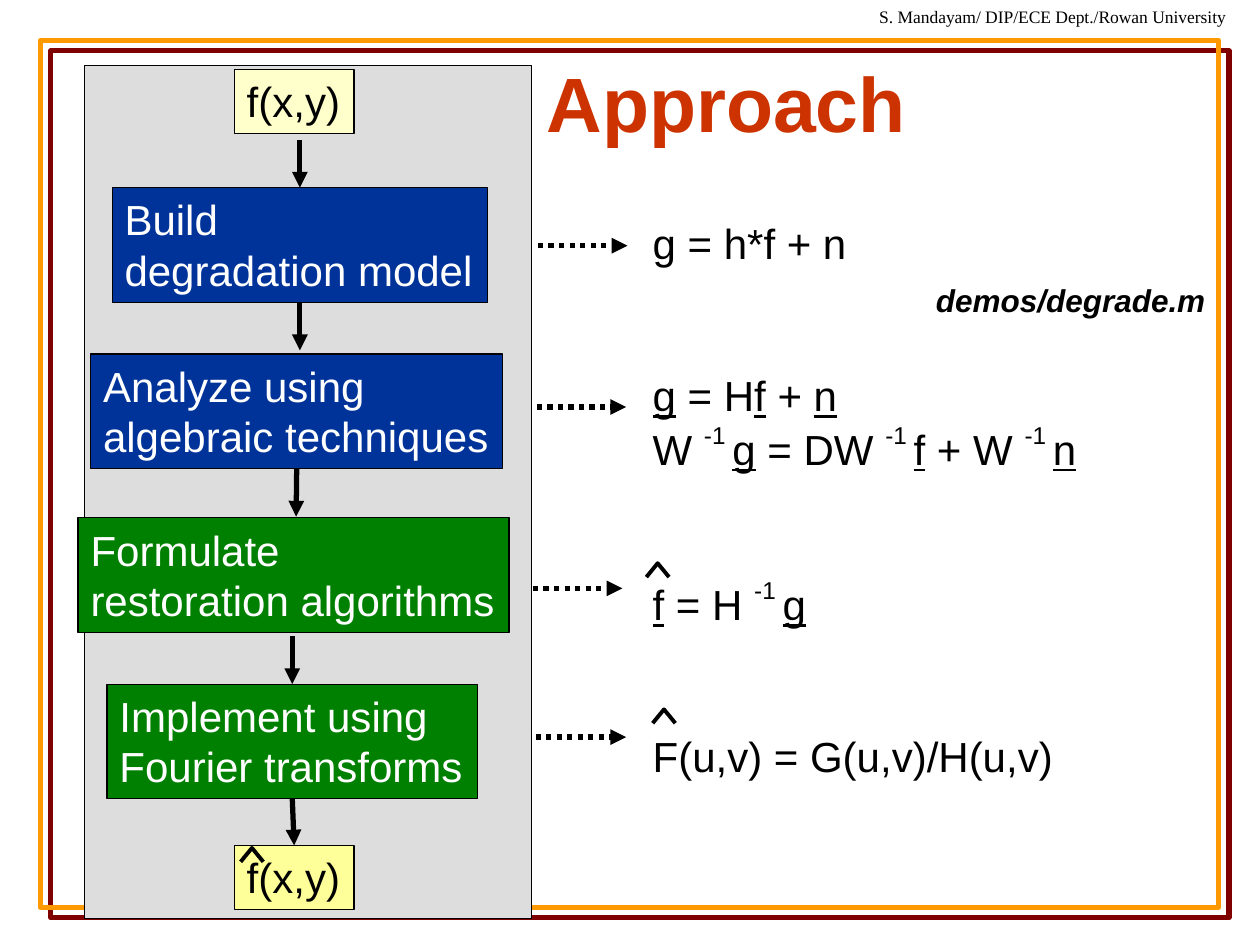
"""Build the image restoration approach slide."""
from typing import NamedTuple, Optional

from lxml.etree import SubElement
from pptx import Presentation
from pptx.dml.color import RGBColor
from pptx.enum.dml import MSO_LINE
from pptx.enum.shapes import MSO_CONNECTOR, MSO_SHAPE
from pptx.enum.text import MSO_ANCHOR, MSO_AUTO_SIZE, PP_ALIGN
from pptx.oxml.ns import qn
from pptx.util import Emu, Pt

EMU_PER_PX = 9144
TOP, BOTTOM = 0, 2
COLORS = {
    "black": "000000", "white": "FFFFFF", "title": "CC3300", "frame": "FF9900",
    "frame_shadow": "800000", "panel": "DDDDDD", "input": "FFFFCC",
    "output": "FFFF99", "model": "003399", "restore": "008000",
}


class Step(NamedTuple):
    left: int
    top: int
    width: int
    height: int
    fill: str
    ink: str
    lines: tuple


class Arrow(NamedTuple):
    start: tuple
    end: tuple
    source: Optional[str] = None
    target: Optional[str] = None
    dotted: bool = False


class Piece(NamedTuple):
    text: str
    underline: bool = False
    raised: bool = False


class Equation(NamedTuple):
    space_before: int
    pieces: tuple


STEPS = {
    "input": Step(186, 55, 95, 51, "input", "black", ("f(x,y)",)),
    "build": Step(89, 149, 298, 91, "model", "white", ("Build", "degradation model")),
    "analyze": Step(72, 281, 327, 91, "model", "white",
                    ("Analyze using", "algebraic techniques")),
    "formulate": Step(62, 411, 342, 91, "restore", "white",
                      ("Formulate", "restoration algorithms")),
    "implement": Step(85, 543, 294, 91, "restore", "white",
                      ("Implement using", "Fourier transforms")),
    "output": Step(186, 671, 95, 51, "output", "black", ("f(x,y)",)),
}
ARROWS = (
    Arrow((238, 111), (238, 149), target="build"),
    Arrow((238, 240), (238, 278), source="build"),
    Arrow((235, 372), (235, 410), source="analyze"),
    Arrow((232, 505), (232, 543), target="implement"),
    Arrow((232, 634), (233, 671), source="implement", target="output"),
    Arrow((427, 195), (498, 195), dotted=True),
    Arrow((426, 323), (497, 323), dotted=True),
    Arrow((423, 467), (494, 467), dotted=True),
    Arrow((425, 585), (497, 585), dotted=True),
)
HATS = ((191, 673), (513, 447), (518, 563))

F, G, N = (Piece(letter, underline=True) for letter in "fgn")
INVERSE = Piece("-1 ", raised=True)
EQUATIONS = (
    Equation(0, (Piece("g = h*f + n"),)),
    Equation(58, (G, Piece(" = H"), F, Piece(" + "), N)),
    Equation(0, (Piece("W "), INVERSE, G, Piece(" = DW "), INVERSE, F,
                 Piece(" + W "), INVERSE, N)),
    Equation(58, (F, Piece(" = H "), INVERSE, G)),
    Equation(58, (Piece("F(u,v) = G(u,v)/H(u,v)"),)),
)


def px(length: int) -> Emu:
    return Emu(length * EMU_PER_PX)


def color(name: str) -> RGBColor:
    return RGBColor.from_string(COLORS[name])


def place(shape, left: int, top: int, width: int, height: int) -> None:
    shape.left, shape.top, shape.width, shape.height = map(px, (left, top, width, height))


def add_run(paragraph, text: str, size: int, ink: str = "black", font: str = "Arial"):
    run = paragraph.add_run()
    run.text = text
    run.font.size, run.font.name = Pt(size), font
    run.font.color.rgb = color(ink)
    return run


def fit_to_text(frame) -> None:
    frame.word_wrap = False
    frame.auto_size = MSO_AUTO_SIZE.SHAPE_TO_FIT_TEXT
    frame.vertical_anchor = MSO_ANCHOR.TOP


def add_box(slide, box: tuple, fill: Optional[str], line: str = "black", weight: float = 0.75):
    shape = slide.shapes.add_shape(MSO_SHAPE.RECTANGLE, *map(px, box))
    shape.shadow.inherit = False
    if fill:
        shape.fill.solid()
        shape.fill.fore_color.rgb = color(fill)
    else:
        shape.fill.background()
    shape.line.color.rgb = color(line)
    shape.line.width = Pt(weight)
    return shape


def add_frame(slide) -> None:
    frame = add_box(slide, (32, 32, 935, 688), None, "frame", 3)
    effects = frame._element.spPr.find(qn("a:effectLst"))
    shadow = SubElement(effects, qn("a:outerShdw"), dist=str(Pt(8.5)), dir="2700000",
                        algn="ctr", rotWithShape="0")
    SubElement(shadow, qn("a:srgbClr"), val=COLORS["frame_shadow"])


def add_step(slide, step: Step):
    shape = add_box(slide, step[:4], step.fill)
    frame = shape.text_frame
    fit_to_text(frame)
    for index, line in enumerate(step.lines):
        paragraph = frame.add_paragraph() if index else frame.paragraphs[0]
        paragraph.alignment = PP_ALIGN.LEFT
        add_run(paragraph, line, 24, step.ink)
    return shape


def add_arrow(slide, arrow: Arrow, boxes: dict) -> None:
    connector = slide.shapes.add_connector(
        MSO_CONNECTOR.STRAIGHT, *map(px, arrow.start + arrow.end))
    if arrow.source:
        connector.begin_connect(boxes[arrow.source], BOTTOM)
    if arrow.target:
        connector.end_connect(boxes[arrow.target], TOP)
    connector.line.color.rgb = color("black")
    connector.line.width = Pt(3)
    if arrow.dotted:
        connector.line.dash_style = MSO_LINE.ROUND_DOT
    properties = connector._element.spPr
    SubElement(properties.find(qn("a:ln")), qn("a:tailEnd"), type="triangle")
    SubElement(properties, qn("a:effectLst"))


def add_hat(slide, left: int, top: int) -> None:
    builder = slide.shapes.build_freeform(left, top + 11, scale=EMU_PER_PX)
    builder.add_line_segments(((left + 9, top), (left + 18, top + 11)), close=False)
    hat = builder.convert_to_shape()
    hat.shadow.inherit = False
    hat.fill.background()
    hat.line.color.rgb = color("black")
    hat.line.width = Pt(2.25)


def add_label(slide, box: tuple, text: str, size: int, font: str = "Arial"):
    label = slide.shapes.add_textbox(*map(px, box))
    fit_to_text(label.text_frame)
    return add_run(label.text_frame.paragraphs[0], text, size, font=font)


def fill_title(title) -> None:
    place(title, 212, 53, 729, 55)
    frame = title.text_frame
    frame.auto_size = MSO_AUTO_SIZE.NONE
    frame.vertical_anchor = MSO_ANCHOR.MIDDLE
    frame.paragraphs[0].alignment = PP_ALIGN.CENTER
    add_run(frame.paragraphs[0], "Approach", 44, "title").font.bold = True


def fill_equations(body) -> None:
    place(body, 508, 168, 366, 529)
    frame = body.text_frame
    fit_to_text(frame)
    for index, equation in enumerate(EQUATIONS):
        paragraph = frame.add_paragraph() if index else frame.paragraphs[0]
        paragraph.alignment = PP_ALIGN.LEFT
        paragraph.space_before = Pt(equation.space_before)
        properties = paragraph._p.get_or_add_pPr()
        properties.set("marL", "0")
        properties.set("indent", "0")
        SubElement(properties, qn("a:buNone"))
        for piece in equation.pieces:
            run = add_run(paragraph, piece.text, 24)
            run.font.underline = piece.underline
            if piece.raised:
                run._r.get_or_add_rPr().set("baseline", "50000")


def main() -> None:
    deck = Presentation()
    deck.slide_width, deck.slide_height = px(1000), px(750)
    slide = deck.slides.add_slide(deck.slide_layouts[1])
    fill_title(slide.shapes.title)
    fill_equations(slide.placeholders[1])
    add_frame(slide)
    add_label(slide, (688, 0, 297, 27), "S. Mandayam/ DIP/ECE Dept./Rowan University",
              10, "Times New Roman")
    add_box(slide, (67, 52, 355, 677), "panel")
    boxes = {name: add_step(slide, step) for name, step in STEPS.items()}
    for arrow in ARROWS:
        add_arrow(slide, arrow, boxes)
    for left, top in HATS:
        add_hat(slide, left, top)
    demo = add_label(slide, (733, 218, 236, 40), "demos/degrade.m", 18)
    demo.font.bold = demo.font.italic = True
    deck.save("out.pptx")


if __name__ == "__main__":
    main()
